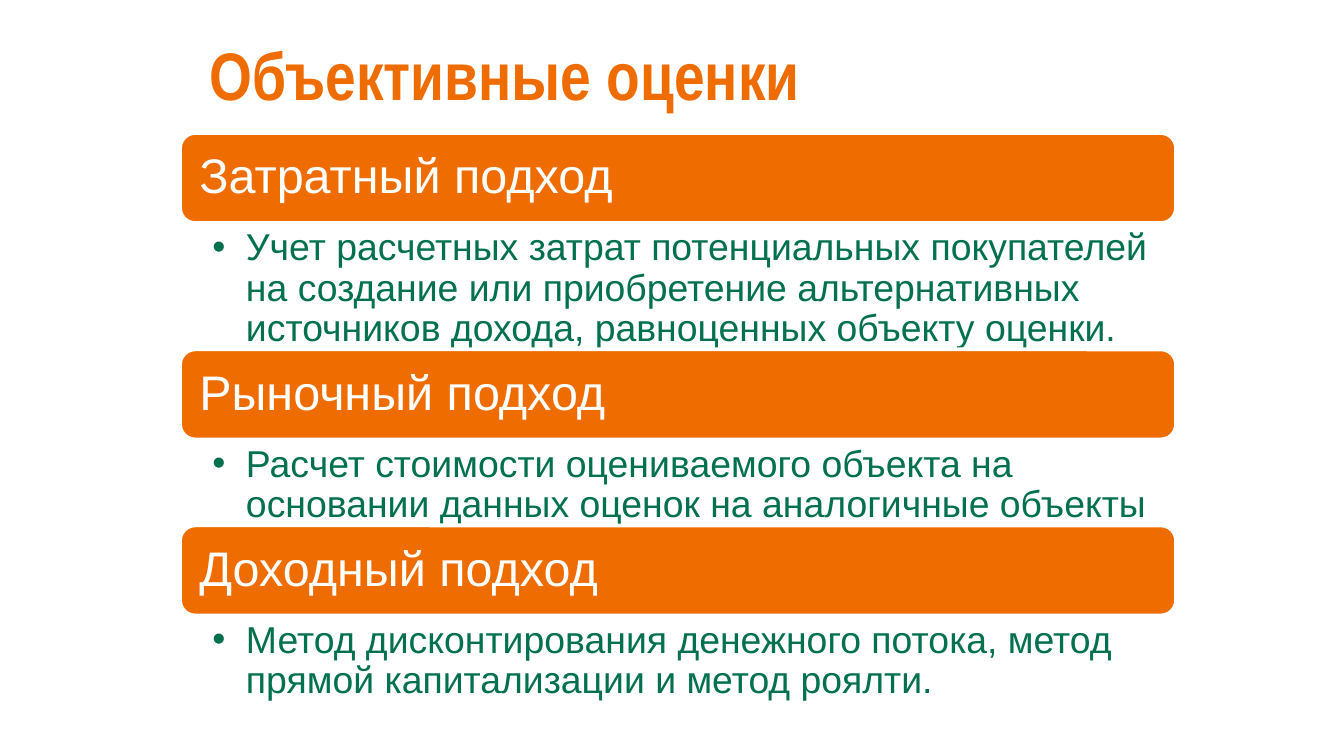
from lxml import etree
from pptx import Presentation, util as u
from pptx.dml.color import RGBColor
from pptx.enum import shapes, text
from pptx.oxml.ns import qn

# Content: heading, explanation, height of the explanation
TITLE = "Объективные оценки"
APPROACHES = [
    ("Затратный подход",
     "Учет расчетных затрат потенциальных покупателей на создание или "
     "приобретение альтернативных источников дохода, равноценных объекту оценки.",
     0.94),
    ("Рыночный подход",
     "Расчет стоимости оцениваемого объекта на основании данных оценок "
     "на аналогичные объекты",
     0.64),
    ("Доходный подход",
     "Метод дисконтирования денежного потока, метод прямой капитализации "
     "и метод роялти.",
     0.64),
]
COLORS = {"orange": "EF6C00", "green": "00704E", "white": "FFFFFF"}

# Layout in inches, on a 16:9 page
WIDTH = 10
HEIGHT = WIDTH * 9 / 16
LEFT, TOP, COLUMN = 1.34, 0.99, 7.41
BAR = 0.67


def color(name):
    return RGBColor.from_string(COLORS[name])


def set_frame(box, insets, anchor):
    frame = box.text_frame
    frame.word_wrap = True
    frame.vertical_anchor = anchor
    (frame.margin_left, frame.margin_top,
     frame.margin_right, frame.margin_bottom) = map(u.Inches, insets)
    return frame.paragraphs[0]


def add_span(para, words, size, tint, font="Arial", bold=False):
    para.alignment = text.PP_ALIGN.LEFT
    span = para.add_run()
    span.text = words
    span.font.name = font
    span.font.size = u.Pt(size)
    span.font.bold = bold
    span.font.color.rgb = color(tint)


def add_bullet(para):
    props = para._p.get_or_add_pPr()
    props.set("marL", str(u.Inches(0.25)))
    props.set("indent", str(u.Inches(-0.25)))
    etree.SubElement(props, qn("a:buFont")).set("typeface", "Arial")
    etree.SubElement(props, qn("a:buChar")).set("char", "•")


deck = Presentation()
deck.slide_width, deck.slide_height = u.Inches(WIDTH), u.Inches(HEIGHT)
page = deck.slides.add_slide(deck.slide_layouts[6])

# Title
box = page.shapes.add_textbox(*map(u.Inches, (1.46, 0.15, 6.75, 0.67)))
para = set_frame(box, [0.1] * 4, text.MSO_ANCHOR.TOP)
add_span(para, TITLE, 36, "orange", "Arial Narrow", True)

# Stack of heading bars, each with its explanation below
top = TOP
for heading, explanation, depth in APPROACHES:
    bar = page.shapes.add_shape(
        shapes.MSO_SHAPE.ROUNDED_RECTANGLE,
        *map(u.Inches, (LEFT, top, COLUMN, BAR)))
    bar.shadow.inherit = False
    bar.fill.solid()
    bar.fill.fore_color.rgb = color("orange")
    bar.line.color.rgb = color("white")
    bar.line.width = u.Pt(2)
    para = set_frame(bar, [0.11] * 4, text.MSO_ANCHOR.MIDDLE)
    para.line_spacing = 0.9
    add_span(para, heading, 26, "white")
    top += BAR

    box = page.shapes.add_textbox(*map(u.Inches, (LEFT, top, COLUMN, depth)))
    para = set_frame(box, (0.24, 0.04, 0.2, 0.04), text.MSO_ANCHOR.TOP)
    para.line_spacing = 0.9
    add_bullet(para)
    add_span(para, explanation, 20, "green")
    top += depth

deck.save("out.pptx")
